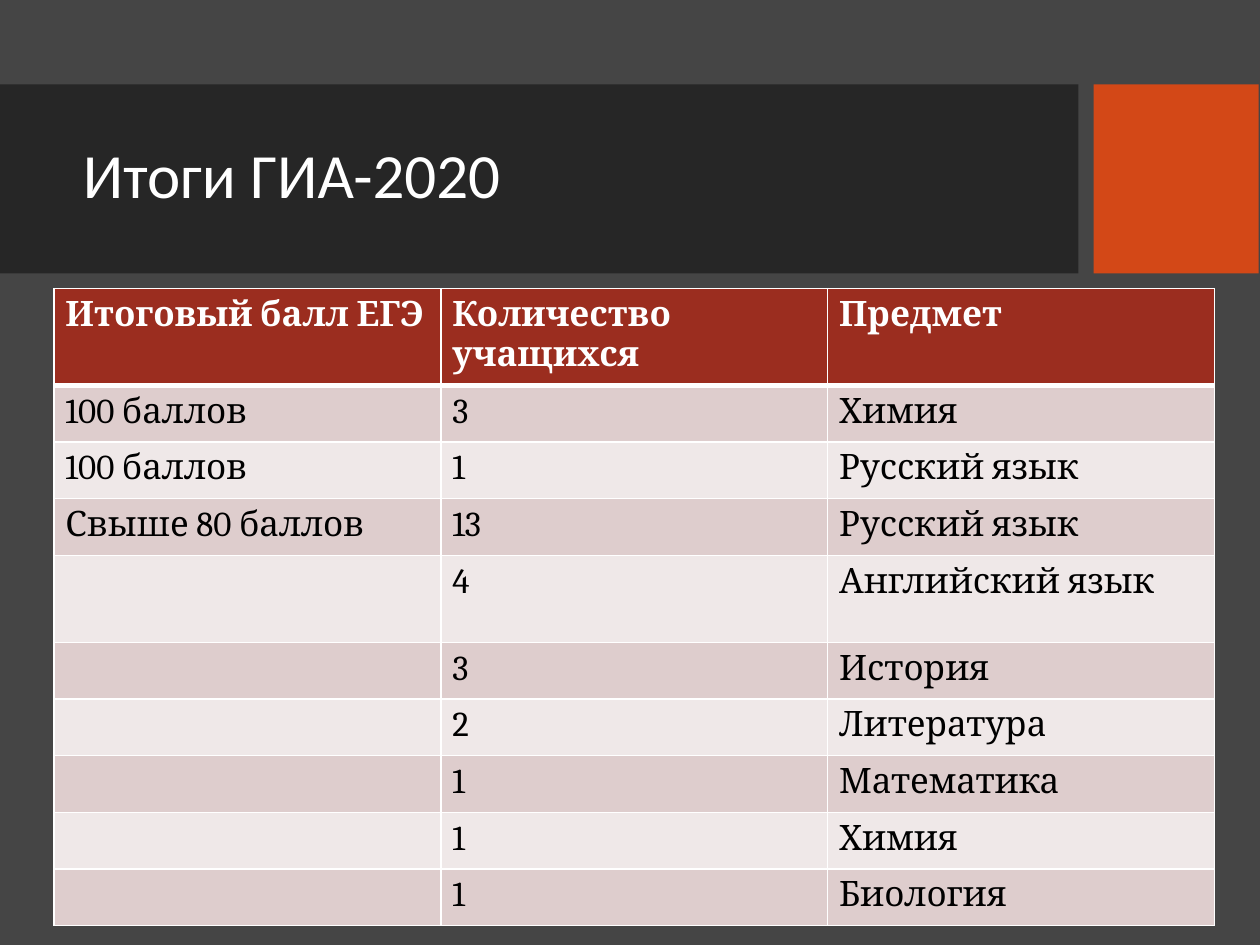
"""Build the exam results slide: a title band above a table of scores."""
import dataclasses

import lxml.etree
import pptx
import pptx.dml.color
import pptx.enum.shapes
import pptx.enum.text
import pptx.oxml.ns
import pptx.util


@dataclasses.dataclass(frozen=True)
class Theme:
    background: str = "454545"
    band: str = "262626"
    accent: str = "D34817"
    header: str = "9B2D1F"
    stripes: tuple = ("EFE8E8", "DECDCD")
    light: str = "FFFFFF"
    dark: str = "000000"
    title_font: str = "Calibri"
    table_font: str = "Cambria"
    title_size: int = 36
    table_size: int = 20


def rgb(value):
    return pptx.dml.color.RGBColor.from_string(value)


def add_border(cell, side, points):
    qn = pptx.oxml.ns.qn
    width = str(pptx.util.Pt(points))
    line = lxml.etree.SubElement(cell._tc.get_or_add_tcPr(), qn(f"a:ln{side}"), w=width)
    fill = lxml.etree.SubElement(line, qn("a:solidFill"))
    lxml.etree.SubElement(fill, qn("a:srgbClr"), val=theme.light)


theme = Theme()
inch = pptx.util.Inches
prs = pptx.Presentation()
prs.slide_width, prs.slide_height = inch(10), inch(7.5)
s = prs.slides.add_slide(prs.slide_layouts[6])
s.background.fill.solid()
s.background.fill.fore_color.rgb = rgb(theme.background)

band_top, band_height = inch(0.67), inch(1.5)
for left, width, color in ((0, 8.56, theme.band), (8.68, 1.31, theme.accent)):
    sp = s.shapes.add_shape(
        pptx.enum.shapes.MSO_SHAPE.RECTANGLE, inch(left), band_top, inch(width), band_height
    )
    sp.shadow.inherit = False
    sp.fill.solid()
    sp.fill.fore_color.rgb = rgb(color)
    sp.line.fill.background()

title = s.shapes.add_textbox(inch(0.56), inch(0.82), inch(7.89), inch(1.18))
tf = title.text_frame
tf.word_wrap = True
tf.vertical_anchor = pptx.enum.text.MSO_ANCHOR.MIDDLE
p = tf.paragraphs[0]
p.text = "Итоги ГИА-2020"
p.line_spacing = 0.9
p.font.name = theme.title_font
p.font.size = pptx.util.Pt(theme.title_size)
p.font.color.rgb = rgb(theme.light)

results = (
    ("Итоговый балл ЕГЭ", "Количество учащихся", "Предмет"),
    ("100 баллов", "3", "Химия"),
    ("100 баллов", "1", "Русский язык"),
    ("Свыше 80 баллов", "13", "Русский язык"),
    ("", "4", "Английский язык"),
    ("", "3", "История"),
    ("", "2", "Литература"),
    ("", "1", "Математика"),
    ("", "1", "Химия"),
    ("", "1", "Биология"),
)
row_height = 0.45
tall_rows = {0: 0.72, 4: 0.69}
heights = [tall_rows.get(i, row_height) for i in range(len(results))]
columns = len(results[0])
table = s.shapes.add_table(
    len(results), columns, inch(0.43), inch(2.29), inch(3.07 * columns), inch(sum(heights))
).table

for i, row in enumerate(results):
    table.rows[i].height = inch(heights[i])
    is_header = i == 0
    for j, text in enumerate(row):
        cell = table.cell(i, j)
        for side in "LRTB":
            below_header = (i, side) in ((0, "B"), (1, "T"))
            add_border(cell, side, 3 if below_header else 1)
        cell.fill.solid()
        cell.fill.fore_color.rgb = rgb(theme.header if is_header else theme.stripes[i % 2])
        cell.margin_left = cell.margin_right = inch(0.09)
        cell.margin_top = cell.margin_bottom = inch(0.05)
        p = cell.text_frame.paragraphs[0]
        if text:
            p.text = text
        p.font.name = theme.table_font
        p.font.size = pptx.util.Pt(theme.table_size)
        p.font.bold = is_header
        p.font.color.rgb = rgb(theme.light if is_header else theme.dark)

prs.save("out.pptx")
